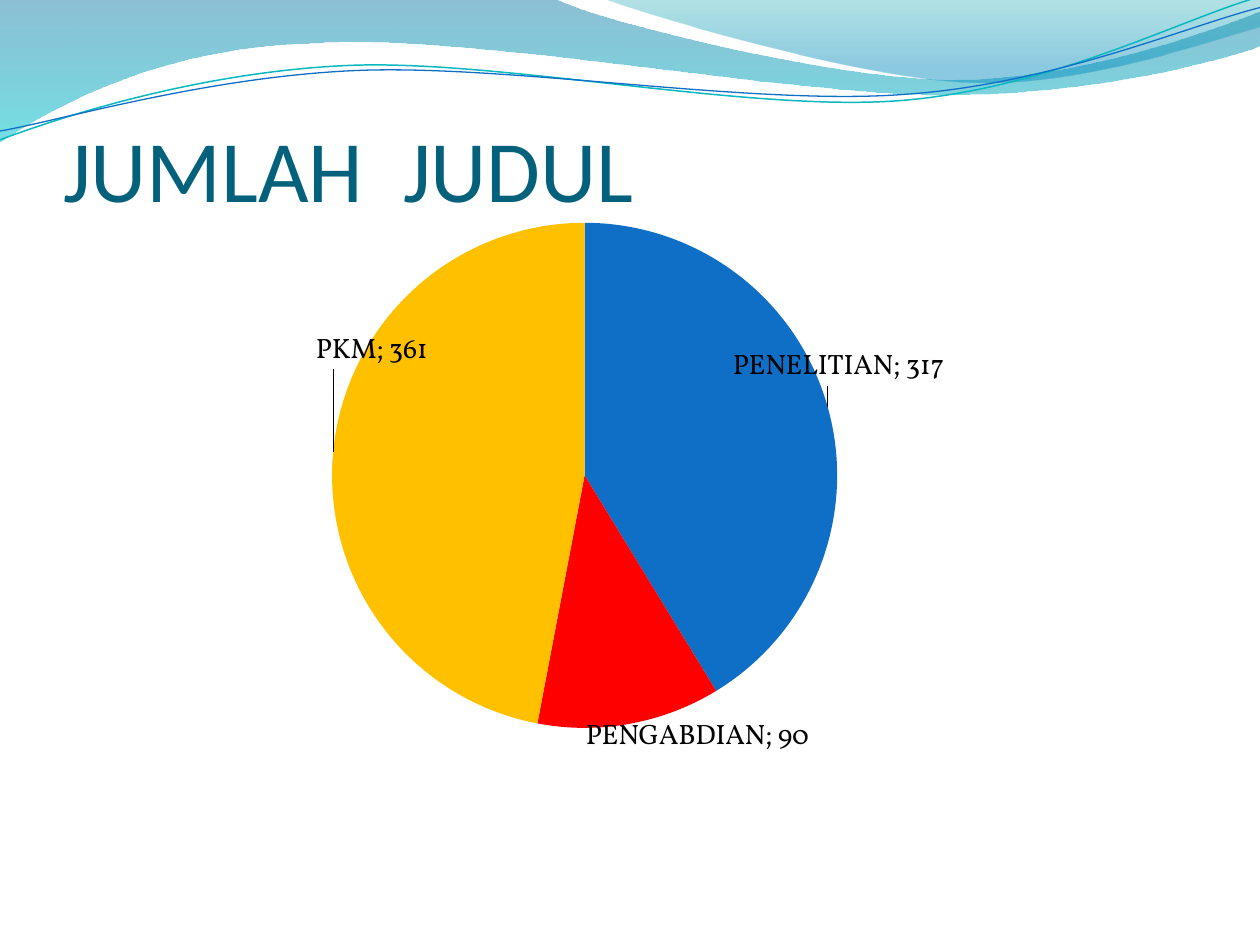
from pptx import Presentation, util as u
from pptx.chart.data import CategoryChartData
from pptx.dml.color import RGBColor
from pptx.enum import chart as ch, text
from pptx.oxml import parse_xml
from pptx.oxml.ns import nsdecls, qn
from lxml import etree

THEME = {
    "title": {"name": "Calibri", "size": u.Pt(50), "color": "04617B"},
    "label": {"name": "Vollkorn", "size": u.Pt(16), "color": "000000"},
    "slices": ["0F6FC6", "FF0000", "FFC000"],
    # gradient stops: position, colour, opacity in percent
    "wave": [(0, "0074A1", 45), (1, "00C6CF", 55)],
    "crest": [(0, "00A1A9", 30), (0.8, "008BBF", 45)],
}

# Each outline: start point, then line points (2 numbers) or Bezier curves (6)
WAVES = [
    ("wave", [(0, 0), (4.4, -0.01), (4.76, 0.17, 6.64, 0.63, 7.58, 0.63),
              (8.53, 0.63, 9.58, 0.26, 10, 0.09), (10.01, 0.36),
              (9.83, 0.44, 8.7, 0.76, 7.46, 0.75),
              (6.22, 0.75, 3.82, 0.28, 2.57, 0.34),
              (1.29, 0.36, 0.46, 0.83, -0.01, 1.13)]),
    ("crest", [(4.79, -0.01), (5.09, 0.11, 6.82, 0.62, 7.69, 0.65),
               (8.56, 0.69, 9.61, 0.32, 10, 0.21), (10, 0)]),
]
STROKES = [
    ("0AB8BF", 0.85, [(0, 1.11), (0.48, 0.93, 1.58, 0.57, 2.77, 0.52),
                      (3.95, 0.47, 5.93, 0.89, 7.13, 0.8),
                      (8.33, 0.71, 9.38, 0.15, 9.98, -0.02)]),
    ("0F6FC6", 0.75, [(0, 1.04), (0.47, 0.96, 1.64, 0.61, 2.83, 0.56),
                      (4.03, 0.51, 5.97, 0.84, 7.17, 0.75),
                      (8.36, 0.67, 9.41, 0.21, 10, 0.06)]),
]


def add_outline(shapes, segments, close):
    """Build a freeform through the end points, then bend its curved segments."""
    ends = [tuple(u.Inches(v) for v in seg[-2:]) for seg in segments]
    builder = shapes.build_freeform(*ends[0])
    builder.add_line_segments(ends[1:], close=close)
    sp = builder.convert_to_shape()
    sp.shadow.inherit = False
    lines = list(sp._element.spPr.iter(qn("a:lnTo")))
    for line, seg in zip(lines, segments[1:]):
        if len(seg) == 6:
            line.tag = qn("a:cubicBezTo")
            for k in (0, 2):
                x, y = u.Inches(seg[k]) - sp.left, u.Inches(seg[k + 1]) - sp.top
                line.insert(k // 2, line.makeelement(qn("a:pt"), {"x": str(x), "y": str(y)}))
    return sp


def set_font(font, style):
    for key in ("name", "size"):
        setattr(font, key, style[key])
    font.color.rgb = RGBColor.from_string(style["color"])


prs = Presentation()
prs.slide_width, prs.slide_height = u.Inches(10), u.Inches(7.5)
W, H = prs.slide_width, prs.slide_height
slide = prs.slides.add_slide(prs.slide_layouts[5])

# Wave header
for name, segments in WAVES:
    sp = add_outline(slide.shapes, segments, close=True)
    sp.line.fill.background()
    sp.fill.gradient()
    sp.fill.gradient_angle = 270
    for stop, (pos, color, _) in zip(sp.fill.gradient_stops, THEME[name]):
        stop.position = pos
        stop.color.rgb = RGBColor.from_string(color)
    for clr, (_, _, opacity) in zip(sp._element.spPr.iter(qn("a:srgbClr")), THEME[name]):
        etree.SubElement(clr, qn("a:alpha"), val=str(opacity * 1000))

for color, width, segments in STROKES:
    sp = add_outline(slide.shapes, segments, close=False)
    sp.fill.background()
    sp.line.color.rgb = RGBColor.from_string(color)
    sp.line.width = u.Pt(width)

# Title
title = slide.shapes.title
box = {"left": 0.05 * W, "top": 0.103 * H, "width": 0.9 * W, "height": 0.13 * H}
for key, value in box.items():
    setattr(title, key, int(value))
tf = title.text_frame
frame = {"margin_left": 0, "margin_right": 0, "margin_top": u.Inches(0.05),
         "margin_bottom": 0, "vertical_anchor": text.MSO_ANCHOR.BOTTOM,
         "auto_size": text.MSO_AUTO_SIZE.NONE, "word_wrap": True}
for key, value in frame.items():
    setattr(tf, key, value)
p = tf.paragraphs[0]
p.alignment = text.PP_ALIGN.LEFT
r = p.add_run()
r.text = "JUMLAH  JUDUL"
set_font(r.font, THEME["title"])

# Pie chart
data = CategoryChartData()
data.categories = ["PENELITIAN", "PENGABDIAN", "PKM"]
data.add_series("Series 1", [317, 90, 361])
chart = slide.shapes.add_chart(
    ch.XL_CHART_TYPE.PIE, int(0.05 * W), int(0.216 * H),
    int(0.9 * W), int(0.66 * H), data).chart
chart.has_legend = False
chart.has_title = False
set_font(chart.font, THEME["label"])

LAYOUT = ("<c:layout %s><c:manualLayout>{}</c:manualLayout></c:layout>"
          % nsdecls("c"))
plot_area = chart._chartSpace.chart.plotArea
for old in plot_area.findall(qn("c:layout")):
    plot_area.remove(old)
plot_area.insert(0, parse_xml(LAYOUT.format(
    '<c:layoutTarget val="inner"/><c:xMode val="edge"/><c:yMode val="edge"/>'
    '<c:x val="0.23"/><c:y val="0.03"/><c:w val="0.46"/><c:h val="0.81"/>')))

plot = chart.plots[0]
plot.vary_by_categories = True
series = plot.series[0]
label_shifts = [(-0.09, -0.03), (-0.04, -0.02), (0.09, -0.13)]
for i, (color, (dx, dy)) in enumerate(zip(THEME["slices"], label_shifts)):
    point = series.points[i]
    point.format.fill.solid()
    point.format.fill.fore_color.rgb = RGBColor.from_string(color)
    point.format.line.fill.background()
    set_font(point.data_label.font, THEME["label"])
    point.data_label.position = ch.XL_LABEL_POSITION.BEST_FIT
    label = series._element.find(qn("c:dLbls")).findall(qn("c:dLbl"))[i]
    label.find(qn("c:showCatName")).set("val", "1")
    label.find(qn("c:idx")).addnext(parse_xml(LAYOUT.format(
        f'<c:x val="{dx}"/><c:y val="{dy}"/>')))
    etree.SubElement(label, qn("c:separator")).text = "; "

prs.save("out.pptx")
